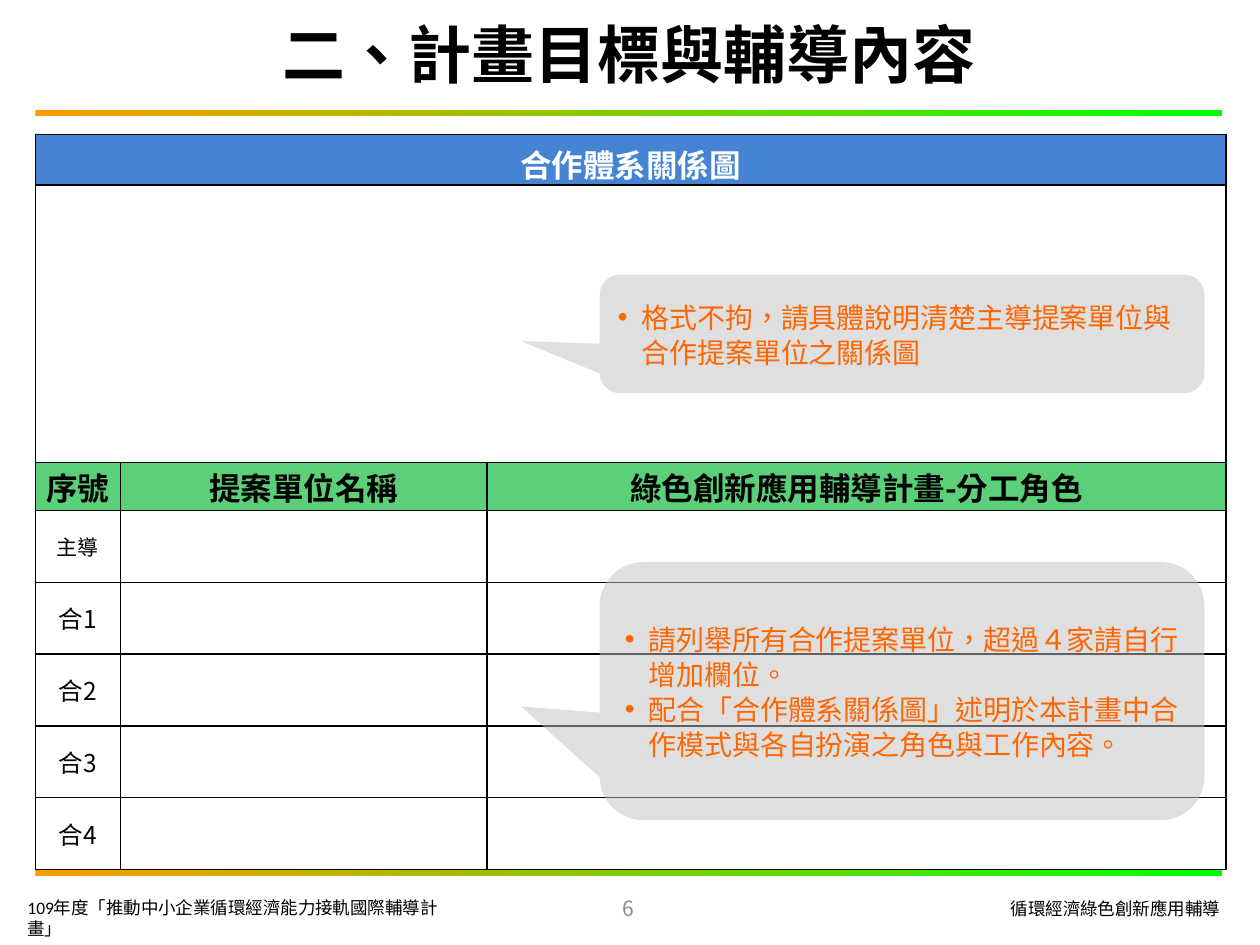
from dataclasses import dataclass

import lxml.etree
import pptx
import pptx.dml.color
import pptx.enum.shapes
import pptx.enum.text
import pptx.oxml.ns
import pptx.util

Pt = pptx.util.Pt
qn = pptx.oxml.ns.qn
ALIGN = pptx.enum.text.PP_ALIGN
MIDDLE = pptx.enum.text.MSO_ANCHOR.MIDDLE
SHAPE = pptx.enum.shapes.MSO_SHAPE
SANS = "Noto Sans CJK SC"
COLORS = {
    "black": "000000", "white": "FFFFFF", "gray": "8C8C8C", "orange": "FF6600",
    "blue": "4584D3", "green": "5BD078", "callout": "C0C0C0",
    "rule_start": "FF9900", "rule_end": "00FF00",
}


@dataclass
class Style:
    size: float
    color: str = "black"
    bold: bool = False
    name: str = SANS
    align: ALIGN = ALIGN.CENTER


@dataclass
class Box:
    left: float
    top: float
    width: float
    height: float

    def emu(self) -> list:
        return [Pt(v) for v in (self.left, self.top, self.width, self.height)]


@dataclass
class Label:
    box: Box
    text: str
    style: Style
    anchor: pptx.enum.text.MSO_ANCHOR = pptx.enum.text.MSO_ANCHOR.TOP


@dataclass
class Callout:
    box: Box
    bullets: list


@dataclass
class Grid:
    box: Box
    cols: list
    rows: list
    texts: dict
    header: str
    margins: dict


HEADING = Style(18, bold=True)
FOOTER = Style(10, name="Calibri", align=ALIGN.LEFT)
FOOTER_RIGHT = Style(10, name="Calibri", align=ALIGN.RIGHT)
NOTE = Style(16, "orange", align=ALIGN.LEFT)

RULES = [Box(20.2, top, 678.2, 3.6) for top in (62.6, 496.8)]
LABELS = [
    Label(Box(8.6, 509, 267.1, 19.4), "109年度「推動中小企業循環經濟能力接軌國際輔導計畫」", FOOTER),
    Label(Box(529.9, 509.8, 174.2, 19.4), "循環經濟綠色創新應用輔導", FOOTER_RIGHT),
    Label(Box(275, 504.7, 167.8, 28.8), "6", Style(12, "gray"), MIDDLE),
]
RELATIONS = Grid(
    Box(20.2, 77, 680.4, 187.2), [680.4], [26.6, 160.6],
    {(0, 0): ("合作體系關係圖", Style(18, "white", True))}, "blue", {},
)
ROLES = Grid(
    Box(20.2, 264.2, 680.4, 232.6), [48.6, 209.5, 422.3], [27.6] + [41] * 5,
    {
        (0, 0): ("序號", HEADING),
        (0, 1): ("提案單位名稱", HEADING),
        (0, 2): ("綠色創新應用輔導計畫-分工角色", HEADING),
        (1, 0): ("主導", Style(12)),
        **{(n + 1, 0): (f"合{n}", Style(14)) for n in range(1, 5)},
    },
    "green",
    {"margin_left": Pt(5), "margin_right": Pt(5), "margin_top": 0, "margin_bottom": 0},
)
CALLOUTS = [
    Callout(Box(342.7, 157, 345.6, 67.7), ["格式不拘，請具體說明清楚主導提案單位與合作提案單位之關係圖"]),
    Callout(Box(342.7, 321.1, 345.6, 147.6), [
        "請列舉所有合作提案單位，超過４家請自行增加欄位。",
        "配合「合作體系關係圖」述明於本計畫中合作模式與各自扮演之角色與工作內容。",
    ]),
]


def rgb(name: str) -> pptx.dml.color.RGBColor:
    return pptx.dml.color.RGBColor.from_string(COLORS[name])


def set_attrs(obj, values: dict) -> None:
    for key, value in values.items():
        setattr(obj, key, value)


def write(p, text: str, style: Style) -> None:
    p.alignment = style.align
    r = p.add_run()
    r.text = text
    set_attrs(r.font, {"size": Pt(style.size), "bold": style.bold, "name": style.name})
    r.font.color.rgb = rgb(style.color)
    rPr = r._r.get_or_add_rPr()
    rPr.set("lang", "zh-TW")
    lxml.etree.SubElement(rPr, qn("a:ea"), typeface=style.name)


def add_rule(slide, box: Box) -> None:
    sp = slide.shapes.add_shape(SHAPE.RECTANGLE, *box.emu())
    sp.shadow.inherit = False
    sp.line.fill.background()
    sp.fill.gradient()
    sp.fill.gradient_angle = 0
    for stop, color in zip(sp.fill.gradient_stops, ("rule_start", "rule_end")):
        stop.color.rgb = rgb(color)


def add_label(slide, label: Label) -> None:
    tf = slide.shapes.add_textbox(*label.box.emu()).text_frame
    set_attrs(tf, {"word_wrap": True, "vertical_anchor": label.anchor})
    write(tf.paragraphs[0], label.text, label.style)


def set_title(slide, text: str) -> None:
    sp = slide.shapes.title
    values = Box(0, 9.4, 718.6, 42.5).emu()
    set_attrs(sp, dict(zip(("left", "top", "width", "height"), values)))
    sp.text_frame.vertical_anchor = MIDDLE
    write(sp.text_frame.paragraphs[0], text, Style(36, bold=True))


def add_borders(cell) -> None:
    tcPr = cell._tc.get_or_add_tcPr()
    for i, side in enumerate(("lnL", "lnR", "lnT", "lnB")):
        ln = lxml.etree.Element(qn(f"a:{side}"), w=str(Pt(1)))
        fill = lxml.etree.SubElement(ln, qn("a:solidFill"))
        lxml.etree.SubElement(fill, qn("a:srgbClr"), val=COLORS["black"])
        tcPr.insert(i, ln)


def add_grid(slide, grid: Grid) -> None:
    table = slide.shapes.add_table(len(grid.rows), len(grid.cols), *grid.box.emu()).table
    set_attrs(table, {"first_row": False, "horz_banding": False})
    for col, width in zip(table.columns, grid.cols):
        col.width = Pt(width)
    for i, height in enumerate(grid.rows):
        table.rows[i].height = Pt(height)
        for j in range(len(grid.cols)):
            cell = table.cell(i, j)
            set_attrs(cell, {"vertical_anchor": MIDDLE, **grid.margins})
            if i == 0:
                cell.fill.solid()
                cell.fill.fore_color.rgb = rgb(grid.header)
            else:
                cell.fill.background()
            add_borders(cell)
            if (i, j) in grid.texts:
                write(cell.text_frame.paragraphs[0], *grid.texts[i, j])


def add_callout(slide, callout: Callout) -> None:
    sp = slide.shapes.add_shape(SHAPE.ROUNDED_RECTANGULAR_CALLOUT, *callout.box.emu())
    for i, value in enumerate((-0.63, 0.06, 0.17)):
        sp.adjustments[i] = value
    sp.shadow.inherit = False
    sp.line.fill.background()
    sp.fill.solid()
    sp.fill.fore_color.rgb = rgb("callout")
    clr = sp._element.spPr.find(f"{qn('a:solidFill')}/{qn('a:srgbClr')}")
    lxml.etree.SubElement(clr, qn("a:alpha"), val="50000")
    tf = sp.text_frame
    set_attrs(tf, {"word_wrap": True, "vertical_anchor": MIDDLE})
    for i, text in enumerate(callout.bullets):
        p = tf.add_paragraph() if i else tf.paragraphs[0]
        p.line_spacing = Pt(20)
        pPr = p._p.get_or_add_pPr()
        pPr.set("marL", str(Pt(13.5)))
        pPr.set("indent", str(Pt(-13.5)))
        lxml.etree.SubElement(pPr, qn("a:buFont"), typeface="Arial")
        lxml.etree.SubElement(pPr, qn("a:buChar"), char="•")
        write(p, text, NOTE)


def main() -> None:
    prs = pptx.Presentation()
    set_attrs(prs, {"slide_width": Pt(720), "slide_height": Pt(540)})
    slide = prs.slides.add_slide(prs.slide_layouts[5])
    for box in RULES:
        add_rule(slide, box)
    for label in LABELS:
        add_label(slide, label)
    set_title(slide, "二、計畫目標與輔導內容")
    for grid, callout in zip((RELATIONS, ROLES), CALLOUTS):
        add_grid(slide, grid)
        add_callout(slide, callout)
    prs.save("out.pptx")


if __name__ == "__main__":
    main()
